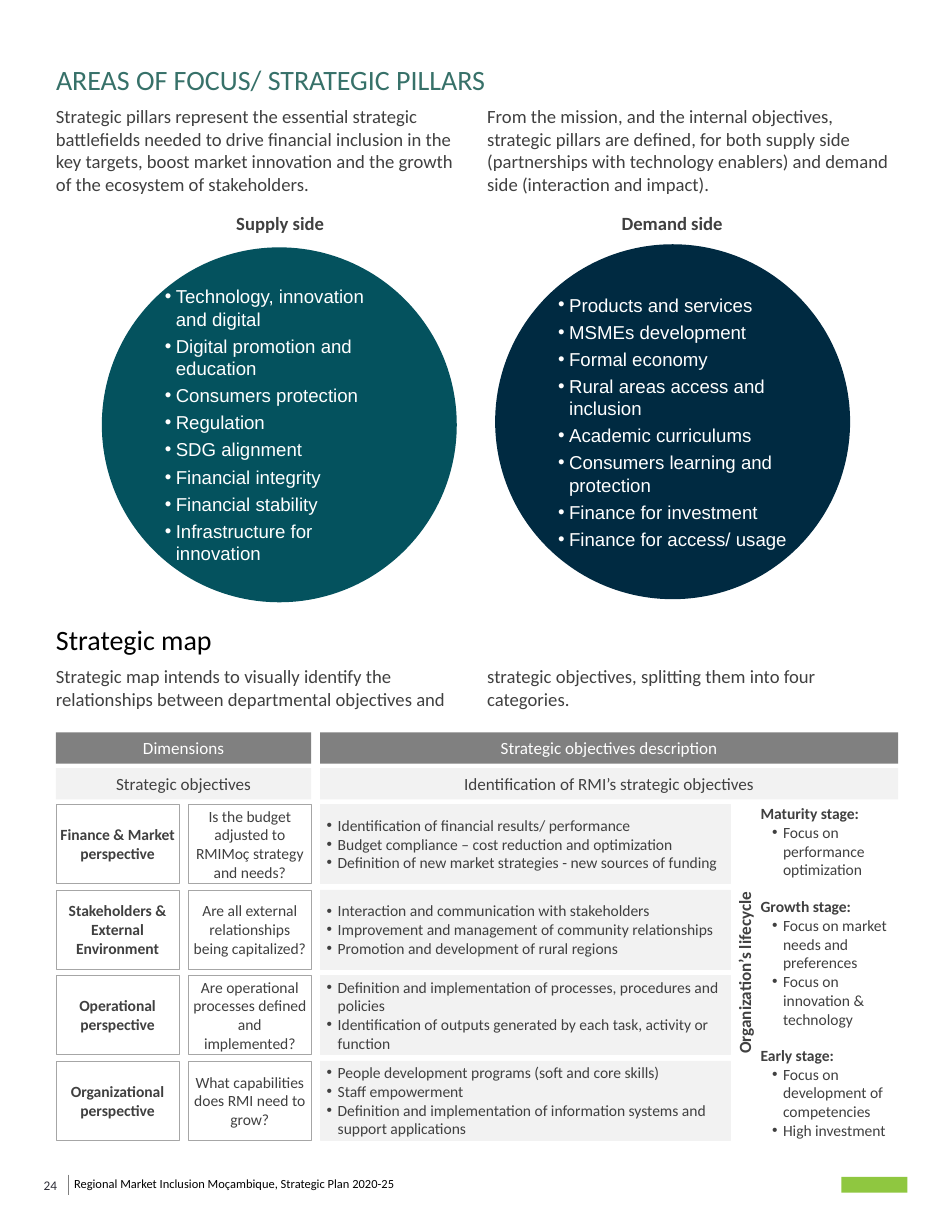
from lxml.etree import SubElement
from pptx import Presentation
from pptx.dml.color import RGBColor
from pptx.enum.shapes import MSO_CONNECTOR, MSO_SHAPE
from pptx.enum.text import MSO_ANCHOR, MSO_AUTO_SIZE, PP_ALIGN
from pptx.oxml.ns import qn
from pptx.util import Cm, Pt

COLORS = {
    "text": "404040", "black": "000000", "white": "FFFFFF", "number": "2E2E38",
    "title": "377169", "supply": "04525E", "demand": "002A41", "header": "808080",
    "band": "F2F2F2", "border": "A6A6A6", "mark": "8FC740",
}
PILLARS = [
    ("Supply side", "supply", 3.89, 2.31, 5.61, [
        "Technology, innovation and digital", "Digital promotion and education",
        "Consumers protection", "Regulation", "SDG alignment", "Financial integrity",
        "Financial stability", "Infrastructure for innovation"]),
    ("Demand side", "demand", 12.78, 11.23, 5.54, [
        "Products and services", "MSMEs development", "Formal economy",
        "Rural areas access and inclusion", "Academic curriculums",
        "Consumers learning and protection", "Finance for investment",
        "Finance for access/ usage"]),
]
PERSPECTIVES = [
    ("Finance & Market perspective",
     "Is the budget adjusted to RMIMoç strategy and needs?",
     ["Identification of financial results/ performance",
      "Budget compliance – cost reduction and optimization",
      "Definition of new market strategies - new sources of funding"]),
    ("Stakeholders & External Environment",
     "Are all external relationships being capitalized?",
     ["Interaction and communication with stakeholders",
      "Improvement and management of community relationships",
      "Promotion and development of rural regions"]),
    ("Operational perspective",
     "Are operational processes defined and implemented?",
     ["Definition and implementation of processes, procedures and policies",
      "Identification of outputs generated by each task, activity or function"]),
    ("Organizational perspective",
     "What capabilities does RMI need to grow?",
     ["People development programs (soft and core skills)", "Staff empowerment",
      "Definition and implementation of information systems and support applications"]),
]
STAGES = [
    (0, 1.7, ["Maturity stage:", "Focus on performance optimization"]),
    (2.11, 3, ["Growth stage:", "Focus on market needs and preferences",
               "Focus on innovation & technology"]),
    (5.48, 2.13, ["Early stage:", "Focus on development of competencies",
                  "High investment"]),
]


def rgb(name):
    return RGBColor.from_string(COLORS[name])


def add_bullet(para, indent):
    props = para._p.get_or_add_pPr()
    props.set("marL", str(Cm(indent)))
    props.set("indent", str(-Cm(0.25)))
    SubElement(props, qn("a:buFont")).set("typeface", "Arial")
    SubElement(props, qn("a:buChar")).set("char", "•")


def write(shape, lines, size, color="text", bold=False, align=PP_ALIGN.LEFT,
          anchor=MSO_ANCHOR.TOP, inset=(0, 0, 0, 0), after=0, font="Calibri",
          bullets_from=None, indent=0.25, columns=1):
    frame = shape.text_frame
    frame.text = "\n".join(lines)
    frame.word_wrap = True
    frame.auto_size = MSO_AUTO_SIZE.NONE
    frame.vertical_anchor = anchor
    (frame.margin_left, frame.margin_top,
     frame.margin_right, frame.margin_bottom) = map(Cm, inset)
    if columns > 1:
        body = frame._txBody.bodyPr
        body.set("numCol", str(columns))
        body.set("spcCol", str(Cm(0.51)))
    for index, para in enumerate(frame.paragraphs):
        bulleted = bullets_from is not None and index >= bullets_from
        if bulleted:
            add_bullet(para, indent)
        para.alignment = align
        para.space_after = Pt(after)
        for span in para.runs:
            span.font.name = font
            span.font.size = Pt(size)
            span.font.bold = bold and not bulleted
            span.font.color.rgb = rgb(color)


def add_text(page, box, lines, size, **style):
    shape = page.shapes.add_textbox(*map(Cm, box))
    write(shape, lines, size, **style)
    return shape


def add_panel(page, box, fill=None, line=None, kind=MSO_SHAPE.RECTANGLE):
    shape = page.shapes.add_shape(kind, *map(Cm, box))
    shape.shadow.inherit = False
    if fill:
        shape.fill.solid()
        shape.fill.fore_color.rgb = rgb(fill)
    else:
        shape.fill.background()
    if line:
        shape.line.color.rgb = rgb(line)
        shape.line.width = Pt(0.25)
    else:
        shape.line.fill.background()
    return shape


def add_focus_intro(page, box):
    left, top, width, height = box
    title = page.shapes.title
    title.left, title.top, title.width, title.height = map(Cm, (left, top, width, 0.97))
    write(title, ["AREAS OF FOCUS/ STRATEGIC PILLARS"], 18, color="title", after=6)
    add_text(page, (left, top + 0.97, width, height - 0.97), [
        "Strategic pillars represent the essential strategic battlefields needed to drive "
        "financial inclusion in the key targets, boost market innovation and the growth "
        "of the ecosystem of stakeholders.",
        "From the mission, and the internal objectives, strategic pillars are defined, for "
        "both supply side (partnerships with technology enablers) and demand side "
        "(interaction and impact)."], 12, after=6, columns=2)


def add_pillar(page, box, label, label_left, color, points):
    add_text(page, (label_left, 4.8, 4.93, 0.51), [label], 12, bold=True,
             align=PP_ALIGN.CENTER, after=6)
    circle = add_panel(page, box, fill=color, kind=MSO_SHAPE.OVAL)
    write(circle, points, 12, color="white", anchor=MSO_ANCHOR.MIDDLE, after=3,
          inset=(0.25, 0.13, 0.25, 0.13), font="Arial", bullets_from=0)


def add_map_intro(page, box):
    left, top, width, height = box
    add_text(page, (left, top, width, height / 2), ["Strategic map"], 18,
             color="black", after=6)
    add_text(page, (left, top + height / 2, width, height / 2), [
        "Strategic map intends to visually identify the relationships between departmental "
        "objectives and strategic objectives, splitting them into four categories."],
        12, after=6, columns=2)


def add_map_headers(page, box):
    left, top, width, height = box
    rows = [
        ("header", "white", "Dimensions", "Strategic objectives description"),
        ("band", "text", "Strategic objectives",
         "Identification of RMI’s strategic objectives"),
    ]
    for row, (fill, color, *labels) in enumerate(rows):
        columns = [(left, 5.79), (left + 5.99, width - 5.99)]
        for (x, wide), label in zip(columns, labels):
            panel = add_panel(page, (x, top + row * 0.81, wide, height), fill=fill)
            write(panel, [label], 11, color=color, align=PP_ALIGN.CENTER,
                  anchor=MSO_ANCHOR.MIDDLE, inset=(0.2, 0, 0.2, 0))


def add_perspective(page, box, name, question, points):
    left, top, width, height = box
    for x, label, bold in [(left, name, True), (left + 3, question, False)]:
        panel = add_panel(page, (x, top, 2.79, height), line="border")
        write(panel, [label], 10, bold=bold, align=PP_ALIGN.CENTER,
              anchor=MSO_ANCHOR.MIDDLE, inset=(0.1, 0.1, 0.1, 0.1))
    panel = add_panel(page, (left + 5.99, top, width - 5.99, height),
                      fill="band", line="band")
    write(panel, points, 10, anchor=MSO_ANCHOR.MIDDLE,
          inset=(0.15, 0.1, 0.1, 0.1), bullets_from=0)


def add_lifecycle(page, box):
    left, top, width, height = box
    label = add_text(page, (left - 4.17, top + 3.45, 7.62, 0.74),
                     ["Organization’s lifecycle"], 11, bold=True,
                     align=PP_ALIGN.CENTER, inset=(0.25, 0.13, 0.25, 0.13))
    label.rotation = 270
    for offset, tall, lines in STAGES:
        add_text(page, (left, top + offset, width, tall), lines, 10, bold=True,
                 bullets_from=1, indent=0.51)


def add_footer(page, box):
    left, top, width, height = box
    add_text(page, (left, top, 0.41, height), ["24"], 8.5, color="number",
             anchor=MSO_ANCHOR.MIDDLE)
    rule = page.shapes.add_connector(MSO_CONNECTOR.STRAIGHT, Cm(left + 0.56),
                                     Cm(top + 0.1), Cm(left + 0.56), Cm(top + 0.56))
    rule.line.color.rgb = rgb("header")
    rule.line.width = Pt(0.5)
    SubElement(rule._element.spPr, qn("a:effectLst"))
    add_text(page, (left + 0.69, top, 8.66, height),
             ["Regional Market Inclusion Moçambique, Strategic Plan 2020-25"], 8,
             color="black", inset=(0, 0.13, 0.25, 0.13))
    add_panel(page, (left + width - 1.5, top + 0.15, 1.5, 0.36), fill="mark")


def main():
    deck = Presentation()
    deck.slide_width, deck.slide_height = Cm(21.59), Cm(27.94)
    page = deck.slides.add_slide(deck.slide_layouts[5])
    add_footer(page, (0.99, 26.54, 19.59, 0.66))
    add_focus_intro(page, (1.27, 1.42, 19.05, 3.08))
    add_map_intro(page, (1.27, 14.12, 19.05, 1.94))
    add_map_headers(page, (1.27, 16.61, 19.1, 0.71))
    for row, perspective in enumerate(PERSPECTIVES):
        add_perspective(page, (1.27, 18.24 + row * 1.94, 15.29, 1.8), *perspective)
    add_lifecycle(page, (17.25, 18.24, 3.1, 7.62))
    for label, color, label_left, left, top, points in PILLARS:
        add_pillar(page, (left, top, 8.05, 8.05), label, label_left, color, points)
    deck.save("out.pptx")


if __name__ == "__main__":
    main()
